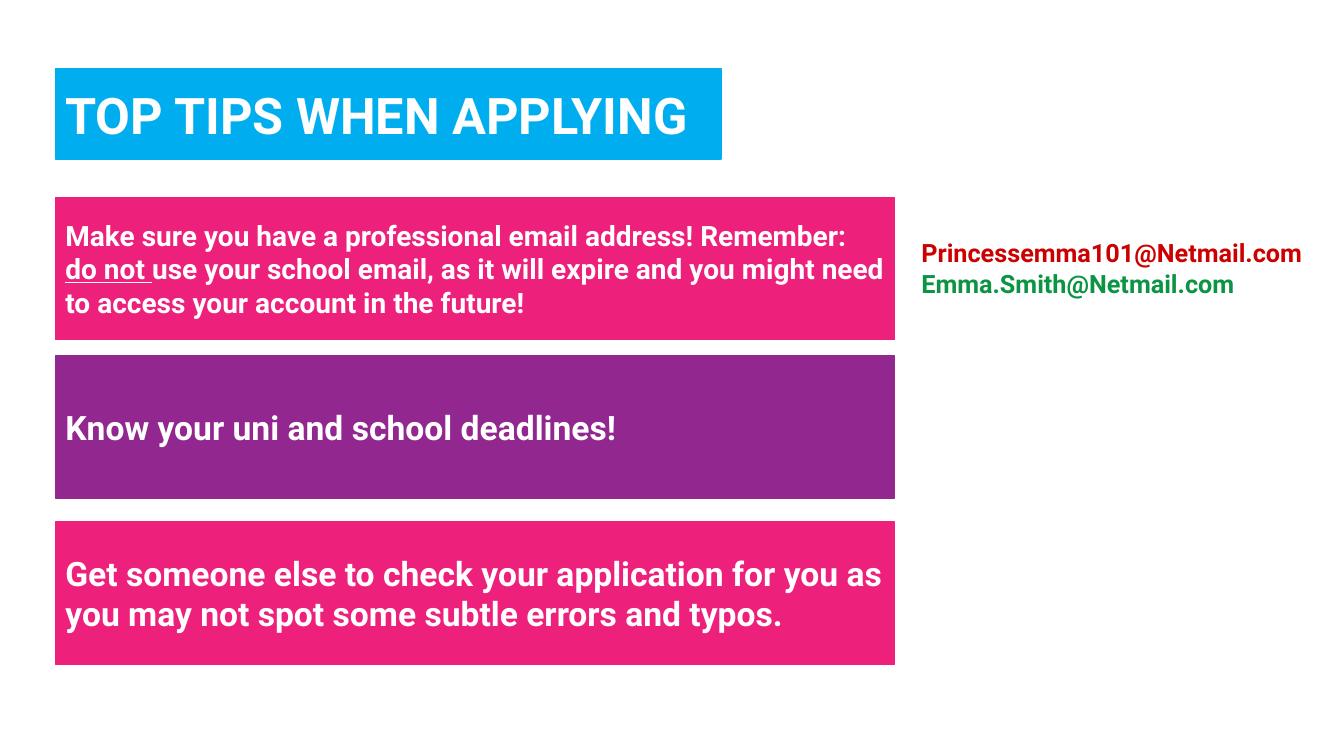
from pptx import Presentation
from pptx.dml.color import RGBColor
from pptx.enum.shapes import MSO_SHAPE
from pptx.enum.text import MSO_ANCHOR, MSO_AUTO_SIZE, PP_ALIGN
from pptx.util import Inches, Pt

RECT = MSO_SHAPE.RECTANGLE
MIDDLE = MSO_ANCHOR.MIDDLE
LEFT = PP_ALIGN.LEFT
GROW = MSO_AUTO_SIZE.SHAPE_TO_FIT_TEXT

WHITE = RGBColor(0xFF, 0xFF, 0xFF)
BLUE = RGBColor(0x00, 0xAE, 0xEF)
PINK = RGBColor(0xED, 0x21, 0x7C)
PURPLE = RGBColor(0x92, 0x27, 0x8F)
RED = RGBColor(0xCC, 0x00, 0x00)
GREEN = RGBColor(0x0B, 0x94, 0x44)
FONT = "Roboto"

MARGIN = 0.55
TITLE_SIZE = (6.6, 0.9)
TIP_SIZE = (8.32, 1.41)

# top, (width, height), fill, text size, (text, underlined) runs
BANNERS = [
    (0.68, TITLE_SIZE, BLUE, 36, [("TOP TIPS WHEN APPLYING", False)]),
    (1.96, TIP_SIZE, PINK, 20, [
        ("Make sure you have a professional email address! Remember: ", False),
        ("do not ", True),
        ("use your school email, as it will expire and you might need to "
         "access your account in the future!", False),
    ]),
    (3.53, TIP_SIZE, PURPLE, 24, [("Know your uni and school deadlines!", False)]),
    (5.18, TIP_SIZE, PINK, 24, [
        ("Get someone else to check your application for you as you may not "
         "spot some subtle errors and typos.", False),
    ]),
]
EMAILS = [("Princessemma101@Netmail.com", RED), ("Emma.Smith@Netmail.com", GREEN)]


def add_run(p, text, size, color=WHITE, underline=False):
    r = p.add_run()
    r.text = text
    r.font.name = FONT
    r.font.size = Pt(size)
    r.font.bold = True
    r.font.underline = underline
    r.font.color.rgb = color


def add_banner(s, top, size, fill, text_size, runs):
    sp = s.shapes.add_shape(RECT, Inches(MARGIN), Inches(top), *map(Inches, size))
    sp.shadow.inherit = False
    sp.fill.solid()
    sp.fill.fore_color.rgb = fill
    sp.line.color.rgb = fill
    sp.line.width = Pt(1)
    tf = sp.text_frame
    tf.word_wrap = True
    tf.vertical_anchor = MIDDLE
    p = tf.paragraphs[0]
    p.alignment = LEFT
    for text, underline in runs:
        add_run(p, text, text_size, underline=underline)


def add_emails(s):
    box = s.shapes.add_textbox(Inches(9.04), Inches(2.31), Inches(4.04), Inches(0.71))
    tf = box.text_frame
    tf.word_wrap = True
    tf.auto_size = GROW
    p = tf.paragraphs[0]
    for i, (address, color) in enumerate(EMAILS):
        if i:
            p.add_line_break()
        add_run(p, address, 18, color)


def main():
    prs = Presentation()
    prs.slide_width, prs.slide_height = Inches(13.33), Inches(7.5)
    s = prs.slides.add_slide(prs.slide_layouts[6])
    for banner in BANNERS:
        add_banner(s, *banner)
    add_emails(s)
    prs.save("out.pptx")


if __name__ == "__main__":
    main()
